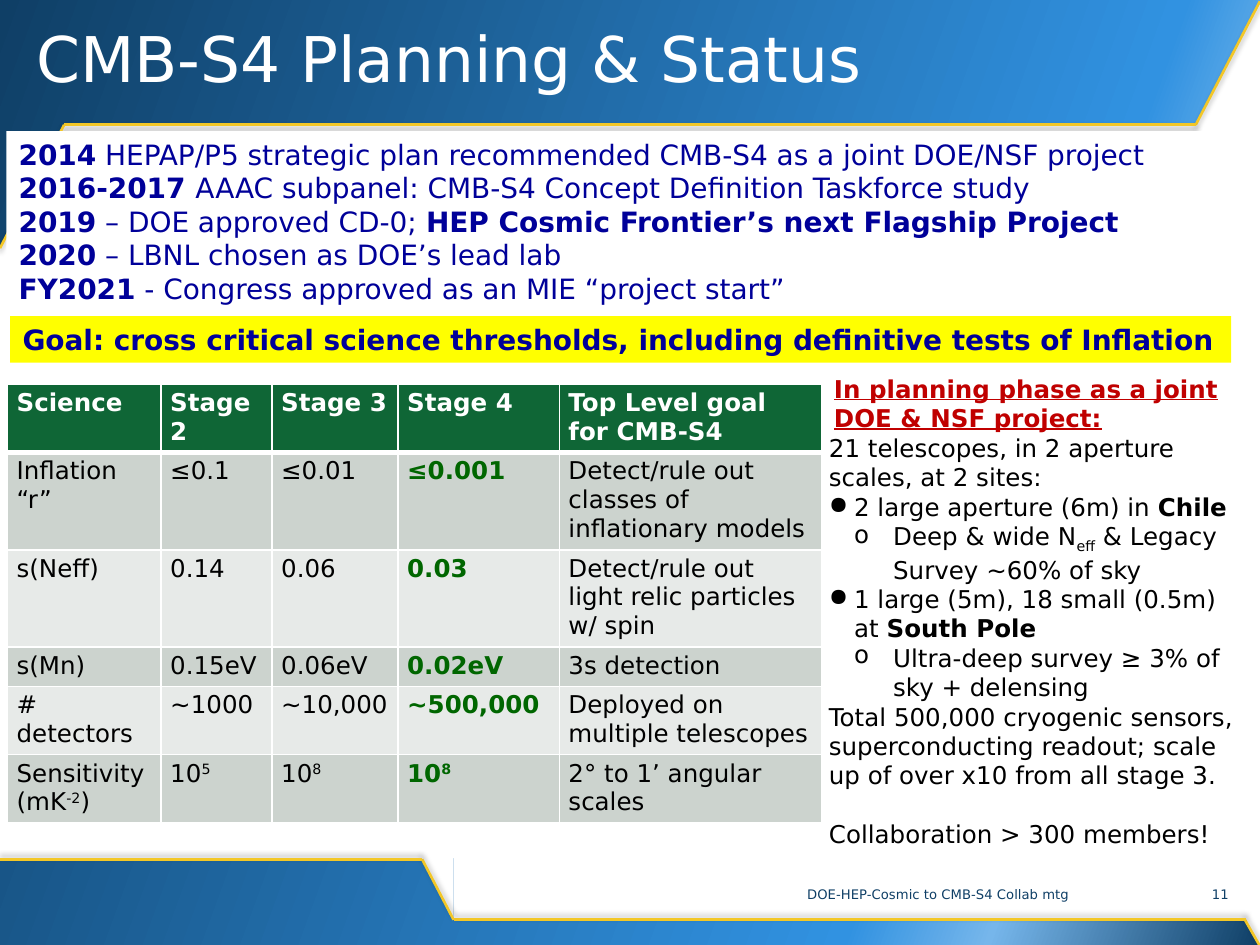
from dataclasses import dataclass
from typing import Any, Optional

from lxml import etree
from pptx import Presentation
from pptx.dml import color as dml
from pptx.enum import shapes, text
from pptx.oxml import ns
from pptx.util import Pt

FONT = "DejaVu Sans"
WHITE, BLACK, NAVY, DEEP = "FFFFFF", "000000", "000099", "0F3F66"
GOLD, RED, GREEN, YELLOW = "F3C727", "C00000", "006600", "FFFF00"
HEADER, BAND_DARK, BAND_LIGHT = "0F6636", "CCD3CE", "E7EAE8"
RECTANGLE = shapes.MSO_SHAPE.RECTANGLE
TRIANGLE = shapes.MSO_SHAPE.RIGHT_TRIANGLE
TOP, MIDDLE = text.MSO_ANCHOR.TOP, text.MSO_ANCHOR.MIDDLE
LEFT, CENTER, RIGHT = text.PP_ALIGN.LEFT, text.PP_ALIGN.CENTER, text.PP_ALIGN.RIGHT


@dataclass(frozen=True)
class Run:
    words: str
    bold: bool = False
    color: Optional[str] = None
    underline: bool = False
    baseline: int = 0


@dataclass(frozen=True)
class Line:
    runs: tuple[Run, ...]
    margin: float = 0
    indent: float = 0
    bullet: str = ""
    level: int = 0
    before: float = 0


@dataclass(frozen=True)
class Panel:
    kind: Any
    box: tuple[float, float, float, float]
    rotation: int = 0
    flipped: bool = False


@dataclass(frozen=True)
class Edge:
    start: tuple[float, float]
    end: tuple[float, float]
    shadow_angle: int


def rgb(value: str) -> dml.RGBColor:
    return dml.RGBColor.from_string(value)


def child(parent: Any, tag: str, **attributes: Any) -> Any:
    element = etree.SubElement(parent, ns.qn(tag))
    for name, value in attributes.items():
        element.set(name, str(value))
    return element


def apply(target: Any, values: dict[str, Any]) -> None:
    for name, value in values.items():
        setattr(target, name, value)


def line(*runs: Run, **layout: Any) -> Line:
    return Line(runs, **layout)


def write(frame: Any, lines: list[Line], size: float, color: str,
          anchor: Any = TOP, align: Any = LEFT, spacing: float = 1.0) -> None:
    apply(frame, {"word_wrap": True, "vertical_anchor": anchor})
    for index, item in enumerate(lines):
        paragraph = frame.add_paragraph() if index else frame.paragraphs[0]
        properties = paragraph._p.get_or_add_pPr()
        properties.set("marL", str(Pt(item.margin)))
        properties.set("indent", str(Pt(item.indent)))
        if item.bullet:
            child(properties, "a:buChar", char=item.bullet)
        apply(paragraph, {"alignment": align, "level": item.level,
                          "line_spacing": spacing, "space_before": Pt(item.before)})
        for part in item.runs:
            run = paragraph.add_run()
            run.text = part.words
            apply(run.font, {"name": FONT, "size": Pt(size), "bold": part.bold,
                             "underline": part.underline})
            run.font.color.rgb = rgb(part.color or color)
            if part.baseline:
                run._r.get_or_add_rPr().set("baseline", str(part.baseline * 1000))


def add_panel(slide: Any, panel: Panel, fill: str = WHITE) -> Any:
    shape = slide.shapes.add_shape(panel.kind, *map(Pt, panel.box))
    shape.shadow.inherit = False
    shape.fill.solid()
    shape.fill.fore_color.rgb = rgb(fill)
    shape.line.fill.background()
    shape.rotation = panel.rotation
    if panel.flipped:
        shape._element.spPr.xfrm.set("flipH", "1")
    return shape


def add_edge(slide: Any, edge: Edge) -> None:
    connector = slide.shapes.add_connector(
        shapes.MSO_CONNECTOR.STRAIGHT, *map(Pt, edge.start + edge.end))
    connector.line.width = Pt(1.5)
    connector.line.color.rgb = rgb(GOLD)
    effects = child(connector._element.spPr, "a:effectLst")
    shadow = child(effects, "a:outerShdw", blurRad=Pt(3), dist=Pt(2),
                   dir=edge.shadow_angle * 60000, rotWithShape=0)
    child(child(shadow, "a:srgbClr", val=BLACK), "a:alpha", val=28000)


def add_text(slide: Any, box: tuple[float, ...], lines: list[Line], size: float,
             color: str, **layout: Any) -> None:
    write(slide.shapes.add_textbox(*map(Pt, box)).text_frame, lines, size, color, **layout)


def paint_background(slide: Any) -> None:
    fill = slide.background.fill
    fill.gradient()
    gradient = slide._element.find(".//" + ns.qn("a:gradFill"))
    for element in list(gradient):
        gradient.remove(element)
    stops = child(gradient, "a:gsLst")
    for position, color in ((0, DEEP), (74, "3192E1"), (83, "76B6EB"), (100, DEEP)):
        child(child(stops, "a:gs", pos=position * 1000), "a:srgbClr", val=color)
    child(gradient, "a:lin", ang=20 * 60000, scaled=0)


def add_borders(cell: Any, bottom: float) -> None:
    properties = cell._tc.get_or_add_tcPr()
    widths = {"a:lnL": 1, "a:lnR": 1, "a:lnT": 1, "a:lnB": bottom}
    for index, (tag, width) in enumerate(widths.items()):
        border = child(properties, tag, w=Pt(width))
        child(child(border, "a:solidFill"), "a:srgbClr", val=WHITE)
        properties.insert(index, border)


def add_science_table(slide: Any, rows: list[list[Any]]) -> None:
    widths, heights = (87.8, 63.4, 72, 92.2, 149.8), (39, 55.5, 55.5, 22.5, 39, 39)
    table = slide.shapes.add_table(len(rows), len(widths), Pt(4.3), Pt(219.6),
                                   Pt(sum(widths)), Pt(sum(heights))).table
    for column, width in zip(table.columns, widths):
        column.width = Pt(width)
    for r, (values, height) in enumerate(zip(rows, heights)):
        table.rows[r].height = Pt(height)
        fill = HEADER if r == 0 else (BAND_DARK if r % 2 else BAND_LIGHT)
        for c, value in enumerate(values):
            cell = table.cell(r, c)
            apply(cell, {"margin_left": Pt(5.2), "margin_right": Pt(5.2),
                         "margin_top": Pt(2.6), "margin_bottom": Pt(2.6)})
            cell.fill.solid()
            cell.fill.fore_color.rgb = rgb(fill)
            add_borders(cell, 1 if r else 3)
            parts = (value,) if isinstance(value, str) else value
            runs = [Run(part, r == 0 or c == 3, baseline=30 * index)
                    for index, part in enumerate(parts[:2])]
            runs += [Run(part) for part in parts[2:]]
            color = WHITE if r == 0 else (GREEN if c == 3 else BLACK)
            write(cell.text_frame, [line(*runs)], 14, color)


PANELS = [
    Panel(TRIANGLE, (683.3, 470.2, 36.7, 70.6), rotation=180),
    Panel(RECTANGLE, (259.2, 480.2, 460.8, 45.4)),
    Panel(RECTANGLE, (0, 140.4, 720, 350)),
    Panel(RECTANGLE, (36.7, 71.3, 683.3, 409)),
    Panel(TRIANGLE, (222.5, 455, 36.7, 70.6), rotation=180),
    Panel(TRIANGLE, (683.3, 0.7, 36.7, 70.6), flipped=True),
    Panel(TRIANGLE, (0, 71.3, 36.7, 70.6), flipped=True),
]
EDGES = [
    Edge((683.3, 71.3), (720, 0.7), 90),
    Edge((711.4, 525.6), (720, 540.7), 270),
    Edge((259.2, 525.6), (712, 525.6), 270),
    Edge((259.2, 525.6), (241.2, 491), 270),
    Edge((0, 491), (241.2, 491), 270),
    Edge((683.3, 71.3), (36.7, 71.3), 90),
    Edge((0, 141.8), (36.7, 71.3), 90),
]
MILESTONES = [
    line(Run("2014", True),
         Run(" HEPAP/P5 strategic plan recommended CMB-S4 as a joint DOE/NSF project")),
    line(Run("2016-2017 ", True),
         Run("AAAC subpanel: CMB-S4 Concept Definition Taskforce study")),
    line(Run("2019", True), Run(" – DOE approved CD-0; "),
         Run("HEP Cosmic Frontier’s next Flagship Project", True)),
    line(Run("2020", True), Run(" – LBNL chosen as DOE’s lead lab")),
    line(Run("FY2021", True), Run(" - Congress approved as an MIE “project start”")),
]
SCIENCE = [
    ["Science", "Stage 2", "Stage 3", "Stage 4", "Top Level goal for CMB-S4"],
    ["Inflation “r”", "≤0.1", "≤0.01", "≤0.001",
     "Detect/rule out classes of inflationary models"],
    ["s(Neff)", "0.14", "0.06", "0.03", "Detect/rule out light relic particles w/ spin"],
    ["s(Mn)", "0.15eV", "0.06eV", "0.02eV", "3s detection"],
    ["# detectors", "~1000", "~10,000", "~500,000", "Deployed on multiple telescopes"],
    [("Sensitivity (mK", "-2", ")"), ("10", "5"), ("10", "8"), ("10", "8"),
     "2° to 1’ angular scales"],
]
BULLET = {"margin": 14.4, "indent": -14.4, "bullet": "●"}
SUB_BULLET = {"margin": 36.7, "indent": -22.3, "bullet": "o", "level": 1}
PLANNING = [
    line(Run("In planning phase as a joint DOE & NSF project:", True, RED, True), margin=2.9),
    line(Run("21 telescopes, in 2 aperture scales, at 2 sites:")),
    line(Run("2 large aperture (6m) in "), Run("Chile", True), **BULLET),
    line(Run("Deep & wide N"), Run("eff", baseline=-25),
         Run(" & Legacy Survey ~60% of sky"), **SUB_BULLET),
    line(Run("1 large (5m), 18 small (0.5m) at "), Run("South Pole", True), **BULLET),
    line(Run("Ultra-deep survey ≥ 3% of sky + delensing"), **SUB_BULLET),
    line(Run("Total 500,000 cryogenic sensors, superconducting readout; "
             "scale up of over x10 from all stage 3.")),
    line(Run("Collaboration > 300 members!"), before=16.8),
]
GOAL = "Goal: cross critical science thresholds, including definitive tests of Inflation"


def main() -> None:
    presentation = Presentation()
    apply(presentation, {"slide_width": Pt(720), "slide_height": Pt(540)})
    slide = presentation.slides.add_slide(presentation.slide_layouts[6])
    paint_background(slide)
    for panel in PANELS:
        add_panel(slide, panel)
    for edge in EDGES:
        add_edge(slide, edge)
    add_text(slide, (13.7, 0, 696.2, 71.3), [line(Run("CMB-S4 Planning & Status"))],
             36, WHITE, anchor=MIDDLE, spacing=0.9)
    add_text(slide, (675.4, 496.8, 33.8, 28.8), [line(Run("11"))],
             7.5, DEEP, anchor=MIDDLE, align=RIGHT)
    history = add_panel(slide, Panel(RECTANGLE, (3.6, 74.9, 715.7, 104.4)))
    write(history.text_frame, MILESTONES, 16, NAVY)
    add_science_table(slide, SCIENCE)
    add_text(slide, (466.6, 210.2, 249.1, 278.6), PLANNING, 14, BLACK)
    goal = add_panel(slide, Panel(RECTANGLE, (5.8, 180.7, 697.7, 26.6)), YELLOW)
    write(goal.text_frame, [line(Run(GOAL, True))], 16, NAVY)
    add_text(slide, (396.7, 496.8, 278.6, 28.8),
             [line(Run("DOE-HEP-Cosmic to CMB-S4 Collab mtg"))],
             7.5, DEEP, anchor=MIDDLE, align=CENTER)
    presentation.save("out.pptx")


if __name__ == "__main__":
    main()
